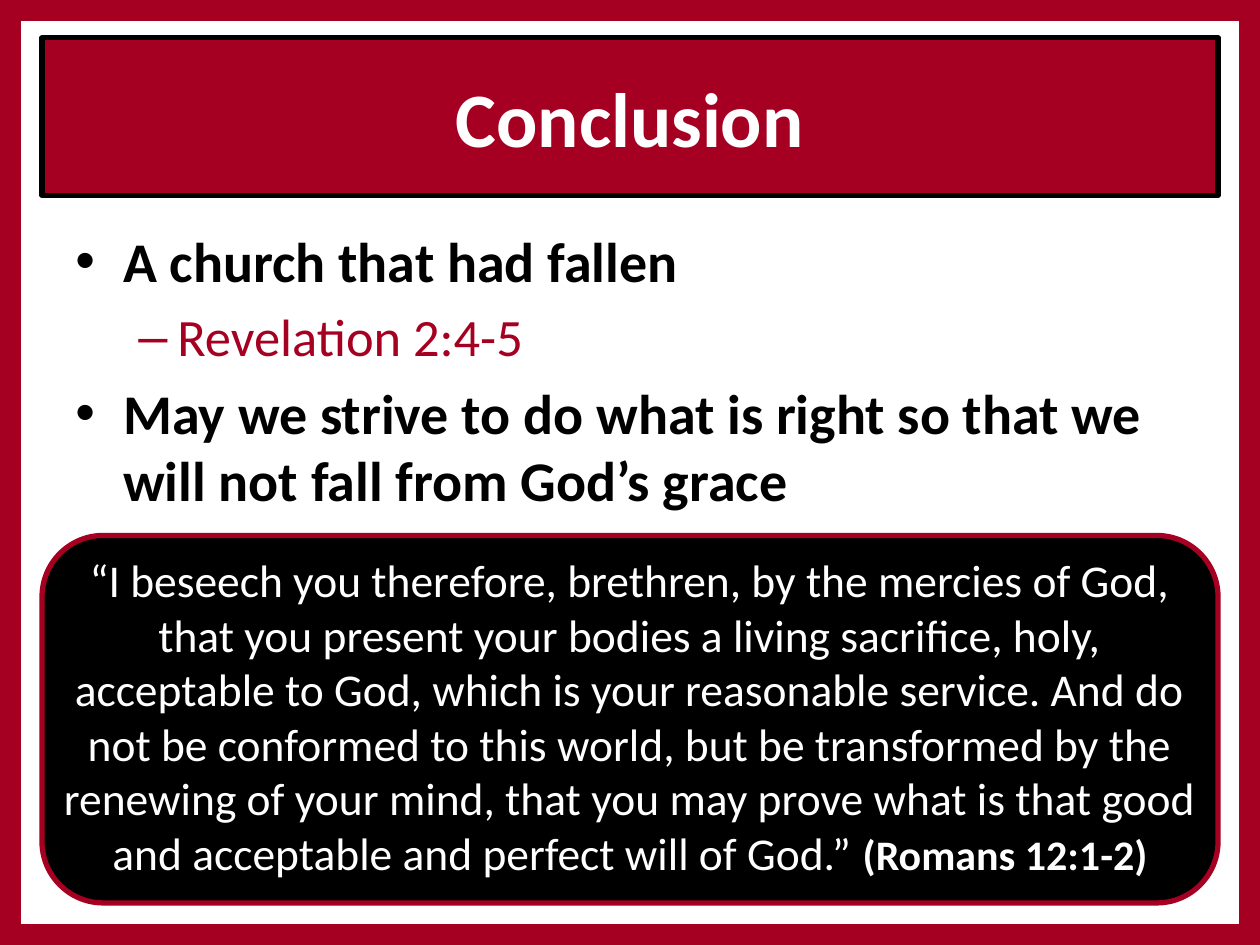
from lxml import etree
from pptx import Presentation, util as u
from pptx.dml.color import RGBColor
from pptx.enum import shapes, text
from pptx.oxml.ns import qn

CRIMSON = RGBColor(0xA5, 0x00, 0x21)
BLACK = RGBColor(0, 0, 0)
WHITE = RGBColor(255, 255, 255)
COLUMNS, ROWS = 120, 90

deck = Presentation()
deck.slide_width, deck.slide_height = u.Inches(10), u.Inches(7.5)
page = deck.slides.add_slide(deck.slide_layouts[6])
cell = deck.slide_width / COLUMNS


def add_box(column, row, columns, rows, fill=None, line=None,
            kind=shapes.MSO_SHAPE.RECTANGLE):
    place = [round(n * cell) for n in (column, row, columns, rows)]
    if fill is None:
        box = page.shapes.add_textbox(*place)
    else:
        box = page.shapes.add_shape(kind, *place)
        box.shadow.inherit = False
        box.fill.solid()
        box.fill.fore_color.rgb = fill
        if line is None:
            box.line.fill.background()
        else:
            box.line.color.rgb = line
            box.line.width = u.Pt(3)
    box.text_frame.word_wrap = True
    return box


def add_span(para, words, size, color, bold=False):
    span = para.add_run()
    span.text = words
    span.font.name = "Calibri"
    span.font.size = u.Pt(size)
    span.font.bold = bold
    span.font.color.rgb = color


title = add_box(4, 3.6, 112, 15, CRIMSON, BLACK)
title.text_frame.vertical_anchor = text.MSO_ANCHOR.MIDDLE
para = title.text_frame.paragraphs[0]
para.alignment = text.PP_ALIGN.CENTER
add_span(para, "Conclusion", 44, WHITE, True)

points = [
    (0, "A church that had fallen"),
    (1, "Revelation 2:4-5"),
    (0, "May we strive to do what is right so that we will not fall from God’s grace"),
]
levels = [
    ("•", 0.38, 0.38, 32, BLACK, True),
    ("–", 0.81, 0.31, 30, CRIMSON, False),
]
body = add_box(6, 21, 110, 29)
for number, (level, words) in enumerate(points):
    mark, margin, hang, size, color, bold = levels[level]
    frame = body.text_frame
    para = frame.add_paragraph() if number else frame.paragraphs[0]
    para.level = level
    para.space_before = u.Pt(size * 0.2)
    props = para._p.get_or_add_pPr()
    props.set("marL", str(u.Inches(margin)))
    props.set("indent", str(-u.Inches(hang)))
    etree.SubElement(props, qn("a:buFont")).set("typeface", "Arial")
    etree.SubElement(props, qn("a:buChar")).set("char", mark)
    add_span(para, words, size, color, bold)

for edge in [(0, 0, 2, ROWS), (COLUMNS - 2, 0, 2, ROWS),
             (0, 0, COLUMNS, 2), (0, ROWS - 2, COLUMNS, 2)]:
    add_box(*edge, CRIMSON)

add_box(4, 51, 112, 35, BLACK, CRIMSON, shapes.MSO_SHAPE.FLOWCHART_ALTERNATE_PROCESS)
verse = add_box(4, 52, 112, 32.8)
para = verse.text_frame.paragraphs[0]
para.alignment = text.PP_ALIGN.CENTER
add_span(para, "“I beseech you therefore, brethren, by the mercies of God, "
         "that you present your bodies a living sacrifice, holy, acceptable to God, "
         "which is your reasonable service. And do not be conformed to this world, "
         "but be transformed by the renewing of your mind, that you may prove what is "
         "that good and acceptable and perfect will of God.” ", 26, WHITE)
add_span(para, "(Romans 12:1-2)", 24, WHITE, True)

deck.save("out.pptx")
